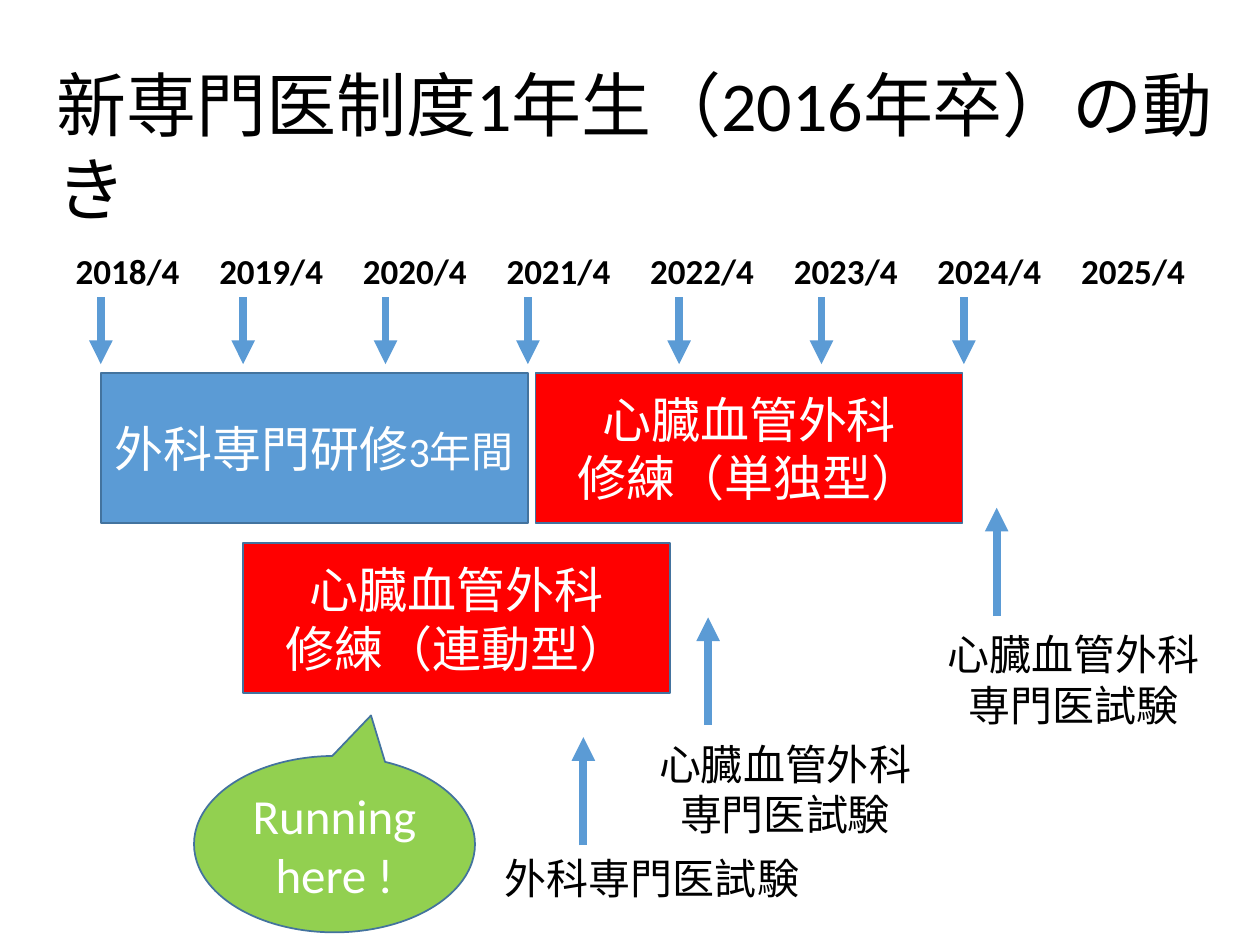
from dataclasses import dataclass

from lxml.etree import SubElement
from pptx import Presentation
from pptx.dml.color import RGBColor
from pptx.enum.shapes import MSO_CONNECTOR, MSO_SHAPE
from pptx.enum.text import MSO_ANCHOR, MSO_AUTO_SIZE, PP_ALIGN
from pptx.oxml.ns import qn
from pptx.util import Inches, Pt


@dataclass(frozen=True)
class Theme:
    font: str = "Calibri"
    ink: str = "000000"
    paper: str = "FFFFFF"
    blue: str = "5B9BD5"
    red: str = "FF0000"
    green: str = "92D050"
    outline: str = "43739E"
    heading: int = 40
    block: int = 28
    label: int = 24
    date: int = 20
    arrow: float = 4.5


@dataclass(frozen=True)
class Area:
    left: float
    top: float
    width: float
    height: float

    def lengths(self) -> tuple:
        return tuple(Inches(value) for value in (self.left, self.top, self.width, self.height))


@dataclass(frozen=True)
class Block:
    area: Area
    text: str
    fill: str
    kind: MSO_SHAPE = MSO_SHAPE.RECTANGLE


@dataclass(frozen=True)
class Label:
    area: Area
    text: str
    size: int
    align: PP_ALIGN = PP_ALIGN.CENTER
    wrap: bool = False


@dataclass(frozen=True)
class Arrow:
    x: float
    start: float
    end: float


THEME = Theme()
DATE_STEP = 1.14
ARROW_STEP = 1.13
DATES = [f"{year}/4" for year in range(2018, 2026)]

TRAINING = Block(Area(0.8, 2.96, 3.39, 1.19), "外科専門研修", THEME.blue)
BLOCKS = [
    Block(Area(4.25, 2.96, 3.39, 1.19), "心臓血管外科\n修練（単独型）", THEME.red),
    Block(Area(1.93, 4.31, 3.39, 1.19), "心臓血管外科\n修練（連動型）", THEME.red),
]
CALLOUT = Block(Area(1.54, 6, 2.23, 1.4), "Running here !", THEME.green,
                MSO_SHAPE.OVAL_CALLOUT)

HEART_EXAM = "心臓血管外科\n専門医試験"
LABELS = [
    Label(Area(0.35, 0.44, 9.39, 0.77), "新専門医制度1年生（2016年卒）の動き",
          THEME.heading, PP_ALIGN.LEFT, True),
    Label(Area(3.91, 6.72, 2.56, 0.5), "外科専門医試験", THEME.label, PP_ALIGN.LEFT),
    Label(Area(5.12, 5.81, 2.22, 0.91), HEART_EXAM, THEME.label),
    Label(Area(7.41, 4.94, 2.22, 0.91), HEART_EXAM, THEME.label),
]

YEAR_ARROWS = [
    Arrow(first + ARROW_STEP * index, 2.36, 2.89)
    for first, count in ((0.8, 4), (5.39, 3))
    for index in range(count)
]
EXAM_ARROWS = [Arrow(4.63, 6.71, 5.85), Arrow(5.62, 5.75, 4.9), Arrow(7.91, 4.89, 4.03)]


def format_text(frame, size: int, color: str, align: PP_ALIGN, bold: bool = False) -> None:
    for para in frame.paragraphs:
        para.alignment = align
        for span in para.runs:
            span.font.name = THEME.font
            span.font.size = Pt(size)
            span.font.bold = bold
            span.font.color.rgb = RGBColor.from_string(color)


def write_dates(title) -> None:
    title.left, title.top, title.width, title.height = Area(0.5, 1.44, 9.24, 1.45).lengths()
    frame = title.text_frame
    frame.text = "\t".join(DATES)
    frame.auto_size = MSO_AUTO_SIZE.NONE
    frame.vertical_anchor = MSO_ANCHOR.MIDDLE
    format_text(frame, THEME.date, THEME.ink, PP_ALIGN.LEFT, bold=True)
    para = frame.paragraphs[0]
    para.line_spacing = 0.9
    tabs = SubElement(para._p.get_or_add_pPr(), qn("a:tabLst"))
    for index in range(1, len(DATES)):
        SubElement(tabs, qn("a:tab"), pos=str(Inches(DATE_STEP * index)), algn="l")


def draw_block(page, block: Block):
    shape = page.shapes.add_shape(block.kind, *block.area.lengths())
    shape.shadow.inherit = False
    shape.fill.solid()
    shape.fill.fore_color.rgb = RGBColor.from_string(block.fill)
    shape.line.color.rgb = RGBColor.from_string(THEME.outline)
    shape.line.width = Pt(1)
    frame = shape.text_frame
    frame.text = block.text
    frame.word_wrap = True
    frame.vertical_anchor = MSO_ANCHOR.MIDDLE
    format_text(frame, THEME.block, THEME.paper, PP_ALIGN.CENTER)
    return shape


def draw_label(page, label: Label) -> None:
    box = page.shapes.add_textbox(*label.area.lengths())
    frame = box.text_frame
    frame.text = label.text
    frame.word_wrap = label.wrap
    frame.auto_size = MSO_AUTO_SIZE.SHAPE_TO_FIT_TEXT
    format_text(frame, label.size, THEME.ink, label.align)


def draw_arrow(page, arrow: Arrow) -> None:
    x = Inches(arrow.x)
    line = page.shapes.add_connector(
        MSO_CONNECTOR.STRAIGHT, x, Inches(arrow.start), x, Inches(arrow.end))
    line.line.color.rgb = RGBColor.from_string(THEME.blue)
    line.line.width = Pt(THEME.arrow)
    SubElement(line.line._get_or_add_ln(), qn("a:tailEnd"), type="triangle")
    SubElement(line._element.spPr, qn("a:effectLst"))


def draw_training(page) -> None:
    frame = draw_block(page, TRAINING).text_frame
    duration = frame.paragraphs[0].add_run()
    duration.text = "3年間"
    format_text(frame, THEME.block, THEME.paper, PP_ALIGN.CENTER)
    duration.font.size = Pt(THEME.label)


def main() -> None:
    deck = Presentation()
    deck.slide_width, deck.slide_height = Inches(10), Inches(7.5)
    page = deck.slides.add_slide(deck.slide_layouts.get_by_name("Title Only"))
    write_dates(page.shapes.title)
    draw_training(page)
    for block in BLOCKS:
        draw_block(page, block)
    for label in LABELS:
        draw_label(page, label)
    for arrow in YEAR_ARROWS + EXAM_ARROWS:
        draw_arrow(page, arrow)
    callout = draw_block(page, CALLOUT)
    callout.adjustments[0] = 0.13
    callout.adjustments[1] = -0.73
    deck.save("out.pptx")


if __name__ == "__main__":
    main()
